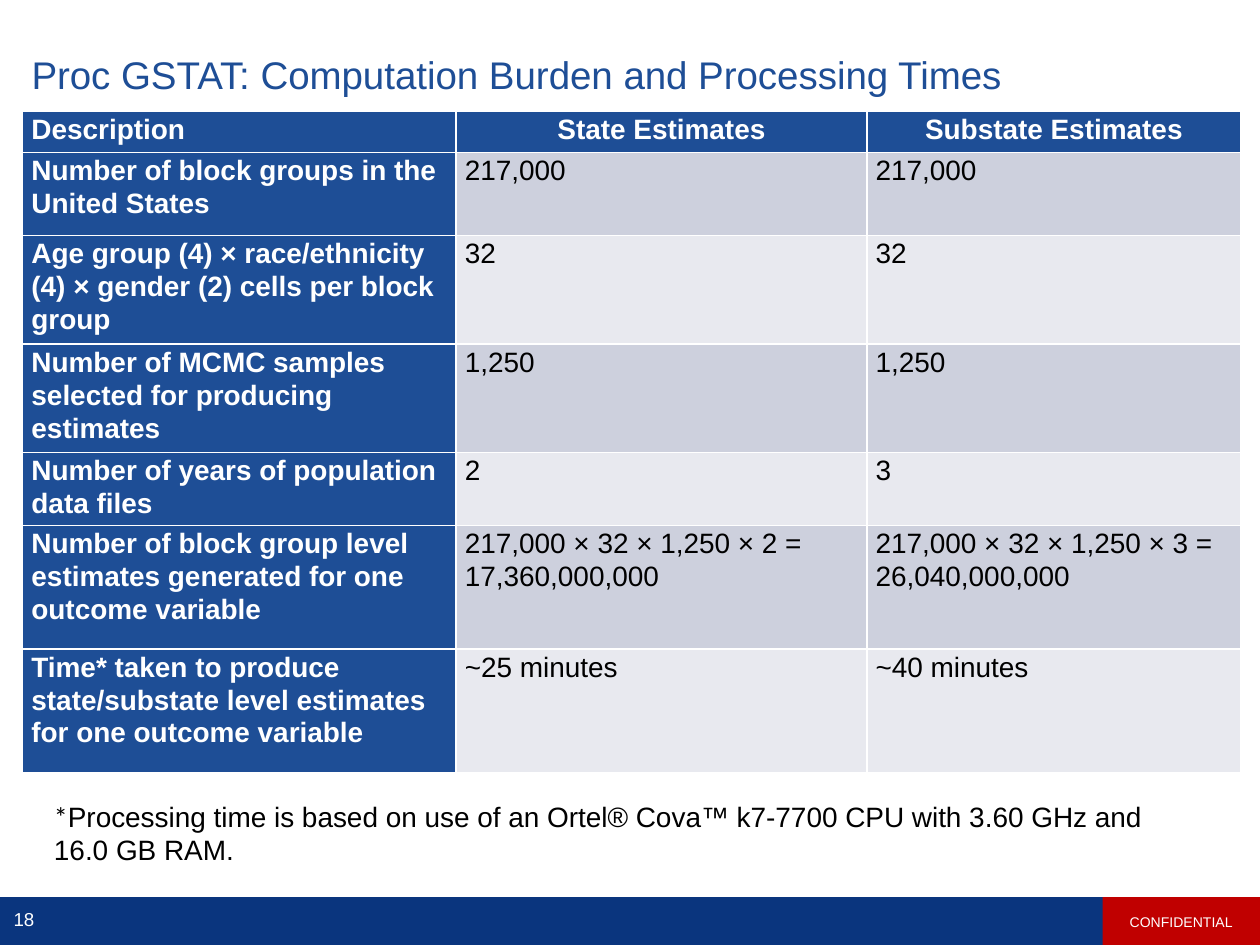
from typing import Any, NamedTuple

from pptx import Presentation
from pptx.dml.color import RGBColor
from pptx.enum.shapes import MSO_SHAPE
from pptx.enum.text import MSO_ANCHOR, PP_ALIGN
from pptx.util import Inches, Pt

RECT = MSO_SHAPE.RECTANGLE
MIDDLE = MSO_ANCHOR.MIDDLE
LEFT, CENTER = PP_ALIGN.LEFT, PP_ALIGN.CENTER

WHITE = RGBColor(0xFF, 0xFF, 0xFF)
BLACK = RGBColor(0x00, 0x00, 0x00)
BLUE = RGBColor(0x1E, 0x4E, 0x96)
NAVY = RGBColor(0x0A, 0x35, 0x7E)
RED = RGBColor(0xC0, 0x00, 0x00)
BANDS = (RGBColor(0xCD, 0xD0, 0xDD), RGBColor(0xE8, 0xE9, 0xEF))


class Box(NamedTuple):
    left: float
    top: float
    width: float
    height: float

    def size(self) -> list[int]:
        return [Inches(n) for n in self]


class Row(NamedTuple):
    height: float
    label: str
    state: str
    local: str


class Style(NamedTuple):
    size: float
    color: RGBColor
    bold: bool = False
    align: Any = LEFT
    face: str = "Arial"


ROWS = [
    Row(0.33, "Description", "State Estimates", "Substate Estimates"),
    Row(0.66, "Number of block groups in the United States", "217,000", "217,000"),
    Row(0.86, "Age group (4) × race/ethnicity (4) × gender (2) cells per block group",
        "32", "32"),
    Row(0.86, "Number of MCMC samples selected for producing estimates",
        "1,250", "1,250"),
    Row(0.58, "Number of years of population data files", "2", "3"),
    Row(0.98, "Number of block group level estimates generated for one outcome variable",
        "217,000 × 32 × 1,250 × 2 = 17,360,000,000",
        "217,000 × 32 × 1,250 × 3 = 26,040,000,000"),
    Row(0.98, "Time* taken to produce state/substate level estimates for one outcome variable",
        "~25 minutes", "~40 minutes"),
]
COLS = (3.44, 3.26, 2.97)
PADS = {"margin_left": Inches(0.07), "margin_right": Inches(0.07),
        "margin_top": Inches(0.01), "margin_bottom": 0}
FRAME = {"word_wrap": True, "vertical_anchor": MIDDLE}
TITLE = {**FRAME, "margin_left": Inches(0.1), "margin_right": Inches(0.2),
         "margin_top": Inches(0.1), "margin_bottom": Inches(0.1)}


def apply(item: Any, values: dict[str, Any]) -> None:
    for name, value in values.items():
        setattr(item, name, value)


def write(para: Any, text: str, style: Style) -> None:
    run = para.add_run()
    run.text = text
    apply(run.font, {"name": style.face, "size": Pt(style.size), "bold": style.bold})
    run.font.color.rgb = style.color
    para.alignment = style.align


def add_bar(slide: Any, box: Box, color: RGBColor) -> Any:
    bar = slide.shapes.add_shape(RECT, *box.size())
    bar.shadow.inherit = False
    bar.fill.solid()
    bar.fill.fore_color.rgb = color
    bar.line.fill.background()
    return bar


def add_text(slide: Any, box: Box) -> Any:
    frame = slide.shapes.add_textbox(*box.size()).text_frame
    apply(frame, FRAME)
    return frame.paragraphs[0]


def fill_cell(cell: Any, text: str, row: int, col: int) -> None:
    head = row == 0 or col == 0
    apply(cell, PADS)
    cell.fill.solid()
    cell.fill.fore_color.rgb = BLUE if head else BANDS[(row - 1) % 2]
    para = cell.text_frame.paragraphs[0]
    para.line_spacing = 1.06
    align = CENTER if row == 0 and col > 0 else LEFT
    write(para, text, Style(16, WHITE if head else BLACK, head, align))


def add_grid(slide: Any, left: float, top: float) -> None:
    box = Box(left, top, sum(COLS), sum(row.height for row in ROWS))
    grid = slide.shapes.add_table(len(ROWS), len(COLS), *box.size()).table
    grid.first_col = True
    for col, width in zip(grid.columns, COLS):
        col.width = Inches(width)
    for r, row in enumerate(ROWS):
        grid.rows[r].height = Inches(row.height)
        for c, text in enumerate(row[1:]):
            fill_cell(grid.cell(r, c), text, r, c)


def main() -> None:
    deck = Presentation()
    apply(deck, {"slide_width": Inches(10), "slide_height": Inches(7.5)})
    slide = deck.slides.add_slide(deck.slide_layouts[5])

    # Footer band
    add_bar(slide, Box(0, 7.12, 10, 0.39), NAVY)

    # Title
    title = slide.shapes.title
    box = Box(0.15, 0.2, 9.67, 0.83)
    apply(title, dict(zip(("left", "top", "width", "height"), box.size())))
    apply(title.text_frame, TITLE)
    para = title.text_frame.paragraphs[0]
    para.line_spacing = 0.9
    write(para, "Proc GSTAT: Computation Burden and Processing Times", Style(22, BLUE))

    # Footnote
    note = add_text(slide, Box(0.33, 6.14, 8.89, 0.94))
    write(note, "*", Style(16, BLACK, face="Calibri"))
    write(note, "Processing time is based on use of an Ortel® Cova™ k7-7700 CPU "
                "with 3.60 GHz and 16.0 GB RAM.", Style(16, BLACK))

    # Table
    add_grid(slide, 0.18, 0.88)

    # Footer label and page number
    tag = add_bar(slide, Box(8.75, 7.12, 1.25, 0.39), RED).text_frame
    apply(tag, FRAME)
    write(tag.paragraphs[0], "CONFIDENTIAL", Style(8, WHITE, align=CENTER))
    page = add_text(slide, Box(0, 7.13, 0.38, 0.32))
    write(page, "18", Style(10.7, WHITE, align=CENTER))

    deck.save("out.pptx")


if __name__ == "__main__":
    main()
